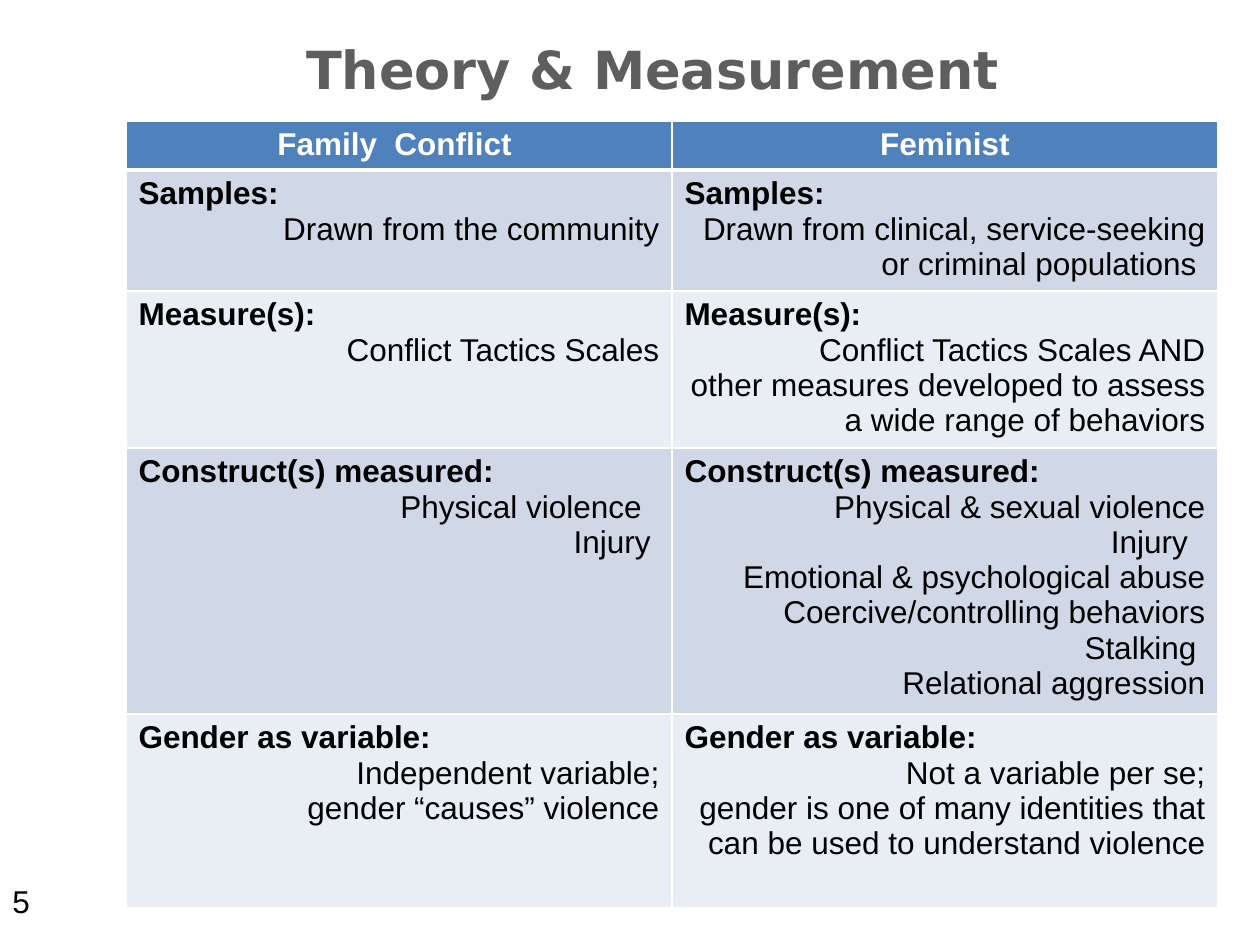
from dataclasses import dataclass

from lxml import etree
from pptx import Presentation
from pptx import util as u
from pptx.dml.color import RGBColor
from pptx.enum import text
from pptx.oxml import ns

PX = 914400 // 126
WHITE = RGBColor(0xFF, 0xFF, 0xFF)
BLACK = RGBColor(0x00, 0x00, 0x00)
TITLE_GREY = RGBColor(0x5E, 0x5E, 0x5E)
HEADER_BLUE = RGBColor(0x4F, 0x81, 0xBD)
BANDS = (RGBColor(0xD0, 0xD8, 0xE8), RGBColor(0xE9, 0xED, 0xF4))
ALIGN = text.PP_ALIGN


@dataclass(frozen=True)
class Topic:
    heading: str
    height: int
    family_conflict: list[str]
    feminist: list[str]


HEADERS = ("Family  Conflict ", "Feminist")
HEADER_HEIGHT = 49
COLUMN_WIDTH = 546
TOPICS = [
    Topic("Samples:", 121,
          ["Drawn from the community"],
          ["Drawn from clinical, service-seeking or criminal populations "]),
    Topic("Measure(s):", 157,
          ["Conflict Tactics Scales"],
          ["Conflict Tactics Scales AND",
           "other measures developed to assess a wide range of behaviors"]),
    Topic("Construct(s) measured:", 266,
          ["Physical violence  ", "Injury "],
          ["Physical & sexual violence", "Injury  ",
           "Emotional & psychological abuse", "Coercive/controlling behaviors",
           "Stalking ", "Relational aggression"]),
    Topic("Gender as variable:", 194,
          ["Independent variable;", "gender “causes” violence"],
          ["Not a variable per se;",
           "gender is one of many identities that can be used to understand violence"]),
]


def px(length: int) -> int:
    return u.Emu(length * PX)


def place(shape, left: int, top: int, width: int, height: int) -> None:
    shape.left, shape.top = px(left), px(top)
    shape.width, shape.height = px(width), px(height)


def format_paragraph(paragraph, align, color: RGBColor, bold: bool,
                     size: int = 18, font: str = "Arial") -> None:
    paragraph.alignment = align
    for run in paragraph.runs:
        run.font.name = font
        run.font.size = u.Pt(size)
        run.font.bold = bold
        run.font.color.rgb = color


def style_cell(cell, fill: RGBColor, top: int = 1, bottom: int = 1) -> None:
    """Fill the cell and give it white borders; top and bottom are in points."""
    properties = cell._tc.get_or_add_tcPr()
    for side, points in (("L", 1), ("R", 1), ("T", top), ("B", bottom)):
        line = etree.SubElement(properties, ns.qn(f"a:ln{side}"), w=str(u.Pt(points)))
        solid = etree.SubElement(line, ns.qn("a:solidFill"))
        etree.SubElement(solid, ns.qn("a:srgbClr"), val=str(WHITE))
    cell.fill.solid()
    cell.fill.fore_color.rgb = fill


def add_title(slide) -> None:
    title = slide.shapes.title
    place(title, 116, 31, 1092, 116)
    title.text_frame.text = "Theory & Measurement "
    title.text_frame.vertical_anchor = text.MSO_ANCHOR.TOP
    format_paragraph(title.text_frame.paragraphs[0], ALIGN.CENTER, TITLE_GREY,
                     True, 30, "DejaVu Sans")


def add_comparison(slide) -> None:
    heights = [HEADER_HEIGHT] + [topic.height for topic in TOPICS]
    table = slide.shapes.add_table(
        len(heights), len(HEADERS), px(126), px(121),
        px(COLUMN_WIDTH * len(HEADERS)), px(sum(heights))).table
    for row, height in zip(table.rows, heights):
        row.height = px(height)
    for index, header in enumerate(HEADERS):
        table.columns[index].width = px(COLUMN_WIDTH)
        cell = table.cell(0, index)
        cell.text_frame.text = header
        format_paragraph(cell.text_frame.paragraphs[0], ALIGN.CENTER, WHITE, True)
        style_cell(cell, HEADER_BLUE, bottom=3)
    for row_index, topic in enumerate(TOPICS):
        for column, points in enumerate((topic.family_conflict, topic.feminist)):
            cell = table.cell(row_index + 1, column)
            cell.text_frame.text = "\n".join([topic.heading, *points])
            heading, *details = cell.text_frame.paragraphs
            format_paragraph(heading, ALIGN.LEFT, BLACK, True)
            for detail in details:
                format_paragraph(detail, ALIGN.RIGHT, BLACK, False)
            style_cell(cell, BANDS[row_index % 2], top=1 if row_index else 3)


def add_page_number(slide) -> None:
    box = slide.shapes.add_textbox(0, 0, 0, 0)
    place(box, 0, 876, 273, 50)
    box.text_frame.word_wrap = True
    box.text_frame.vertical_anchor = text.MSO_ANCHOR.BOTTOM
    box.text_frame.text = "5"
    format_paragraph(box.text_frame.paragraphs[0], ALIGN.LEFT, BLACK, False)


def main() -> None:
    presentation = Presentation()
    presentation.slide_width, presentation.slide_height = px(1260), px(945)
    slide = presentation.slides.add_slide(presentation.slide_layouts[5])
    add_title(slide)
    add_comparison(slide)
    add_page_number(slide)
    presentation.save("out.pptx")


if __name__ == "__main__":
    main()
